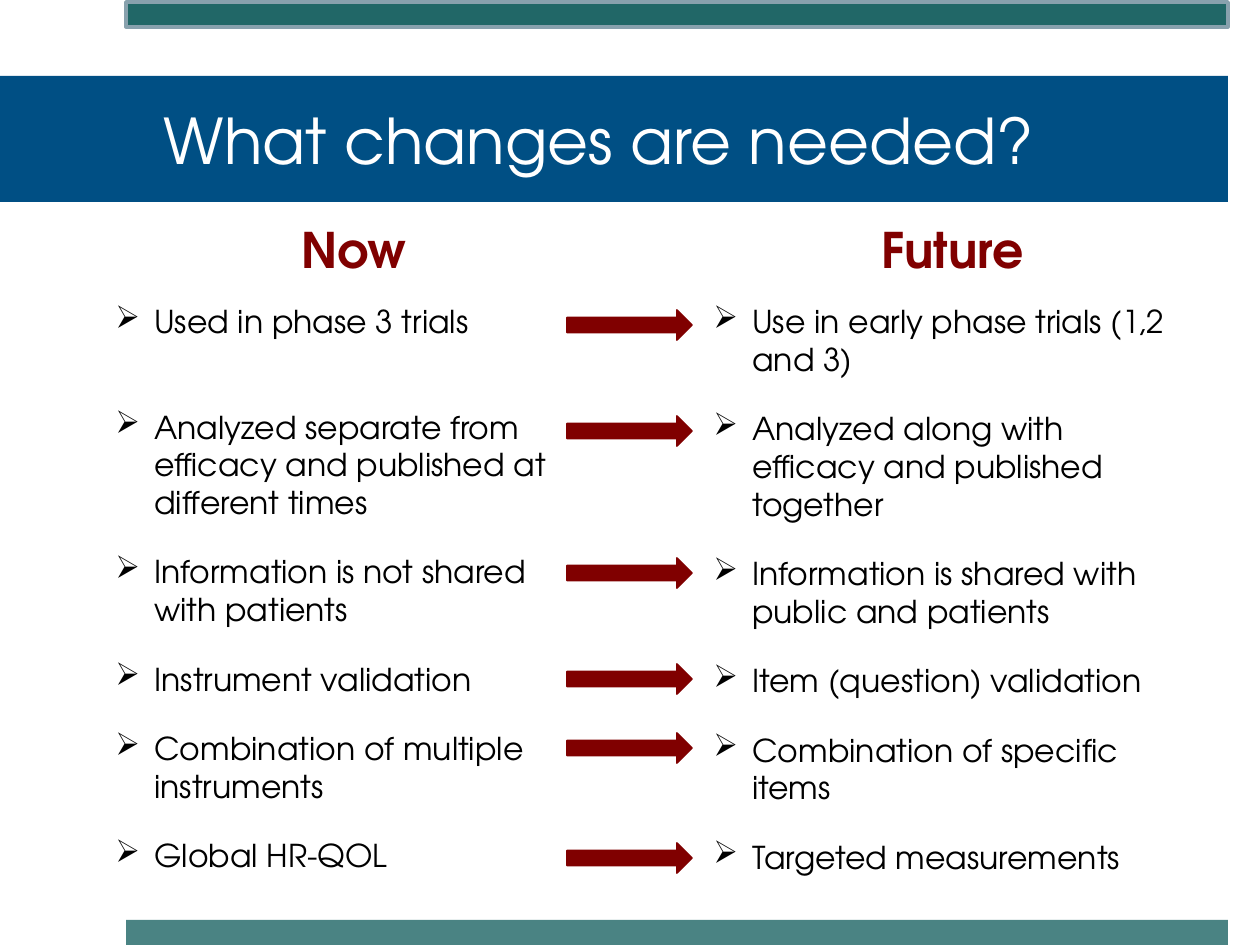
from dataclasses import dataclass

import lxml.etree
import pptx
import pptx.dml.color
import pptx.enum.shapes
import pptx.enum.text
import pptx.oxml.ns
import pptx.shapes.autoshape
import pptx.slide
import pptx.text.text
import pptx.util

EMU_PER_PX = 914400 / 126
SHAPE = pptx.enum.shapes.MSO_SHAPE
ALIGN = pptx.enum.text.PP_ALIGN
ANCHOR = pptx.enum.text.MSO_ANCHOR


@dataclass(frozen=True)
class Theme:
    font: str = "TeX Gyre Adventor"
    teal: str = "005151"
    frame: str = "88A1AD"
    blue: str = "004F84"
    maroon: str = "800000"
    white: str = "FFFFFF"
    black: str = "000000"
    title_size: int = 36
    heading_size: int = 28
    body_size: int = 18
    item_gap: float = 18
    first_gap: float = 38.6


THEME = Theme()


@dataclass(frozen=True)
class Box:
    left: int
    top: int
    width: int
    height: int


@dataclass(frozen=True)
class Column:
    heading: str
    heading_box: Box
    list_box: Box
    first_gap: float
    items: tuple[str, ...]


COLUMNS = (
    Column("Now", Box(287, 213, 134, 72), Box(103, 296, 504, 659), THEME.first_gap, (
        "Used in phase 3 trials",
        "Analyzed separate from efficacy and published at different times",
        "Information is not shared with patients",
        "Instrument validation",
        "Combination of multiple instruments",
        "Global HR-QOL",
    )),
    Column("Future", Box(867, 213, 171, 72), Box(701, 296, 504, 592), THEME.item_gap, (
        "Use in early phase trials (1,2 and 3)",
        "Analyzed along with efficacy and published together",
        "Information is shared with public and patients",
        "Item (question) validation",
        "Combination of specific items",
        "Targeted measurements",
    )),
)
ARROW_TOPS = (310, 416, 558, 664, 733, 843)


def px(length: int) -> pptx.util.Emu:
    return pptx.util.Emu(round(length * EMU_PER_PX))


def place(box: Box) -> tuple[pptx.util.Emu, ...]:
    return px(box.left), px(box.top), px(box.width), px(box.height)


def rgb(color: str) -> pptx.dml.color.RGBColor:
    return pptx.dml.color.RGBColor.from_string(color)


def add_filled(slide: pptx.slide.Slide, kind: SHAPE, box: Box, fill: str,
               line: str | None = None, line_width: int = 1,
               opacity: int = 100) -> pptx.shapes.autoshape.Shape:
    shape = slide.shapes.add_shape(kind, *place(box))
    shape.shadow.inherit = False
    shape.fill.solid()
    shape.fill.fore_color.rgb = rgb(fill)
    if opacity < 100:
        color = shape.fill._xPr.find(".//" + pptx.oxml.ns.qn("a:srgbClr"))
        alpha = lxml.etree.SubElement(color, pptx.oxml.ns.qn("a:alpha"))
        alpha.set("val", str(opacity * 1000))
    if line is None:
        shape.line.fill.background()
    else:
        shape.line.color.rgb = rgb(line)
        shape.line.width = pptx.util.Pt(line_width)
    return shape


def write(paragraph: pptx.text.text._Paragraph, text: str, size: int, color: str,
          bold: bool = False, alignment: ALIGN = ALIGN.LEFT) -> None:
    paragraph.text = text
    paragraph.alignment = alignment
    paragraph.font.name = THEME.font
    paragraph.font.size = pptx.util.Pt(size)
    paragraph.font.bold = bold
    paragraph.font.color.rgb = rgb(color)


def add_bullet(paragraph: pptx.text.text._Paragraph) -> None:
    properties = paragraph._p.get_or_add_pPr()
    properties.set("marL", str(px(39)))
    properties.set("indent", str(px(-39)))
    bullet = pptx.oxml.parse_xml(
        f'<a:buChar {pptx.oxml.ns.nsdecls("a")} char="➢"/>')
    properties.insert_element_before(
        bullet, "a:tabLst", "a:defRPr", "a:extLst")


def add_title(slide: pptx.slide.Slide) -> None:
    band = add_filled(slide, SHAPE.RECTANGLE, Box(0, 76, 1228, 126), THEME.blue)
    frame = band.text_frame
    frame.word_wrap = True
    frame.vertical_anchor = ANCHOR.MIDDLE
    frame.margin_left = px(164)
    frame.margin_right = px(38)
    write(frame.paragraphs[0], "What changes are needed?", THEME.title_size, THEME.white)


def add_column(slide: pptx.slide.Slide, column: Column) -> None:
    heading = slide.shapes.add_textbox(*place(column.heading_box)).text_frame
    heading.word_wrap = False
    write(heading.paragraphs[0], column.heading, THEME.heading_size, THEME.maroon,
          bold=True, alignment=ALIGN.CENTER)

    frame = slide.shapes.add_textbox(*place(column.list_box)).text_frame
    frame.word_wrap = True
    for index, item in enumerate(column.items):
        paragraph = frame.add_paragraph() if index else frame.paragraphs[0]
        write(paragraph, item, THEME.body_size, THEME.black)
        gap = THEME.item_gap if index else column.first_gap
        paragraph.space_after = pptx.util.Pt(gap)
        add_bullet(paragraph)


def main() -> None:
    presentation = pptx.Presentation()
    presentation.slide_width = px(1260)
    presentation.slide_height = px(945)
    slide = presentation.slides.add_slide(presentation.slide_layouts[6])

    add_filled(slide, SHAPE.RECTANGLE, Box(126, 2, 1102, 25), THEME.teal,
               THEME.frame, line_width=2, opacity=87)
    add_filled(slide, SHAPE.RECTANGLE, Box(126, 920, 1102, 25), THEME.teal, opacity=71)
    add_title(slide)
    for column in COLUMNS:
        add_column(slide, column)
    for top in ARROW_TOPS:
        add_filled(slide, SHAPE.RIGHT_ARROW, Box(567, top, 125, 30),
                   THEME.maroon, THEME.maroon)

    presentation.save("out.pptx")


if __name__ == "__main__":
    main()
